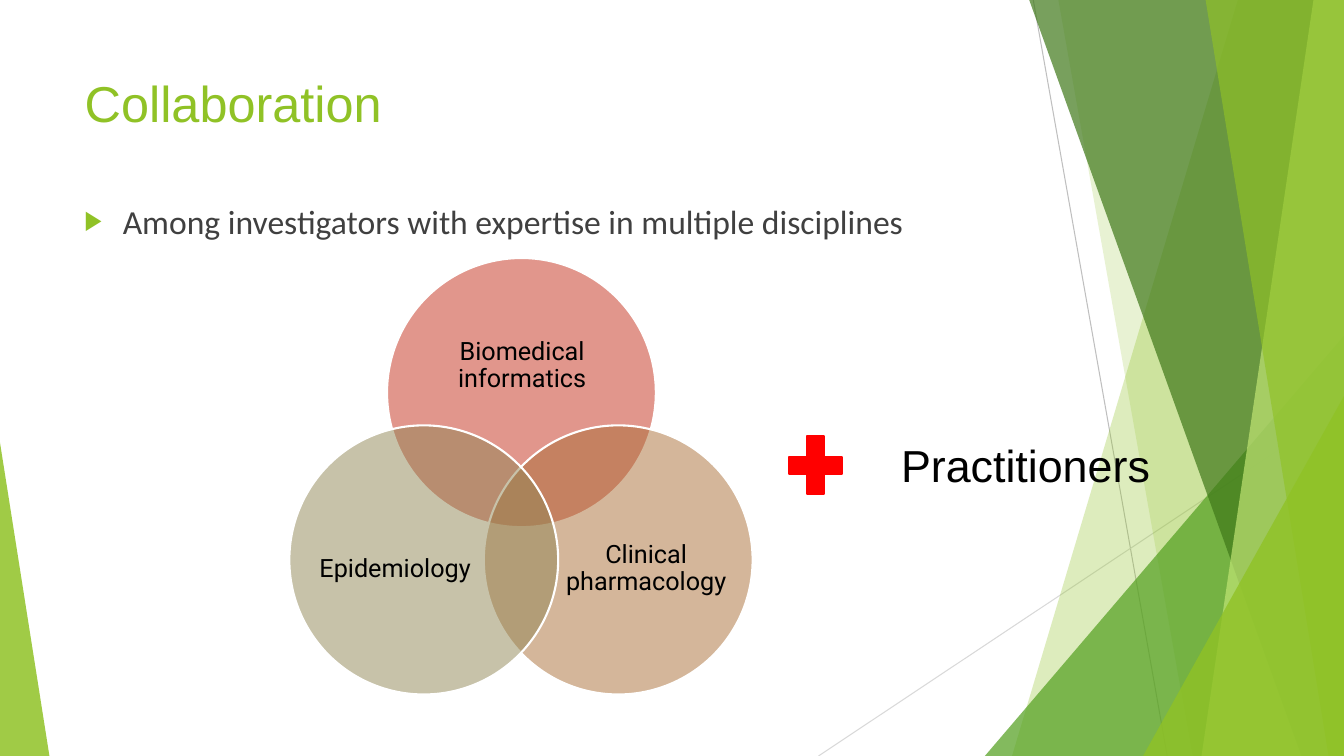
from dataclasses import dataclass

from lxml import etree
from pptx import Presentation, util as u
from pptx.dml.color import RGBColor
from pptx.enum import shapes, text
from pptx.oxml.ns import qn

SHAPE = shapes.MSO_SHAPE
ANCHOR = text.MSO_ANCHOR
ALIGN = text.PP_ALIGN


@dataclass(frozen=True)
class Theme:
    """Colours, fonts and type sizes of the slide."""
    lime: str = "90C226"
    pale: str = "C0E474"
    green: str = "54A021"
    forest: str = "3F7819"
    grey: str = "BFBFBF"
    silver: str = "D9D9D9"
    white: str = "FFFFFF"
    black: str = "000000"
    body: str = "404040"
    red: str = "FF0000"
    brick: str = "C42F1A"
    copper: str = "AB6E37"
    olive: str = "918655"
    heading_font: str = "Arial"
    body_font: str = "Calibri"
    label_font: str = "Roboto"
    title_size: int = 36
    callout_size: int = 32
    body_size: int = 24
    label_size: int = 18


class Deck:
    """Draws elements on one slide, with lengths in percent of its size."""

    def __init__(self, theme):
        self.t = theme
        self.prs = Presentation()
        self.prs.slide_width, self.prs.slide_height = u.Inches(13.33), u.Inches(7.5)
        self.s = self.prs.slides.add_slide(self.prs.slide_layouts[5])

    def x(self, share):
        return round(self.prs.slide_width * share / 100)

    def y(self, share):
        return round(self.prs.slide_height * share / 100)

    def box(self, left, top, width, height):
        return self.x(left), self.y(top), self.x(width), self.y(height)

    def put(self, obj, values):
        for name, value in values.items():
            setattr(obj, name, value)

    def paint(self, sp, color, alpha=100, line=None):
        sp.shadow.inherit = False
        sp.fill.solid()
        sp.fill.fore_color.rgb = RGBColor.from_string(color)
        if alpha < 100:
            clr = sp._element.spPr.find(qn("a:solidFill"))[0]
            etree.SubElement(clr, qn("a:alpha"), val=str(alpha * 1000))
        if line:
            sp.line.color.rgb = RGBColor.from_string(line)
            sp.line.width = u.Pt(1.5)
        else:
            sp.line.fill.background()

    def line(self, start, end, color):
        sp = self.s.shapes.add_connector(
            shapes.MSO_CONNECTOR.STRAIGHT,
            self.x(start[0]), self.y(start[1]), self.x(end[0]), self.y(end[1]))
        sp.line.color.rgb = RGBColor.from_string(color)
        sp.line.width = u.Pt(0.75)
        etree.SubElement(sp._element.spPr, qn("a:effectLst"))

    def band(self, top, bottom, color, alpha):
        fb = self.s.shapes.build_freeform(self.x(top), 0)
        fb.add_line_segments([(self.x(100), 0), (self.x(100), self.y(100)),
                              (self.x(bottom), self.y(100))], close=True)
        self.paint(fb.convert_to_shape(), color, alpha)

    def shape(self, kind, box, color, alpha=100, line=None, adj=None):
        sp = self.s.shapes.add_shape(kind, *self.box(*box))
        if adj is not None:
            sp.adjustments[0] = adj
        self.paint(sp, color, alpha, line)

    def fill_text(self, sp, words, font, size, color, frame=None, para=None):
        tf = sp.text_frame
        self.put(tf, {"word_wrap": True, "auto_size": text.MSO_AUTO_SIZE.NONE,
                      "vertical_anchor": ANCHOR.TOP, **(frame or {})})
        p = tf.paragraphs[0]
        self.put(p, {"alignment": ALIGN.LEFT, **(para or {})})
        r = p.add_run()
        r.text = words
        self.put(r.font, {"name": font, "size": u.Pt(size)})
        r.font.color.rgb = RGBColor.from_string(color)
        return p

    def title(self, words, box):
        sp = self.s.shapes.title
        self.put(sp, dict(zip(("left", "top", "width", "height"), self.box(*box))))
        self.fill_text(sp, words, self.t.heading_font, self.t.title_size, self.t.lime)

    def text(self, words, box, *style, **formats):
        sp = self.s.shapes.add_textbox(*self.box(*box))
        return self.fill_text(sp, words, *style, **formats)

    def bullet(self, words, box):
        p = self.text(words, box, self.t.body_font, self.t.body_size, self.t.body,
                      para={"space_before": u.Pt(10)})
        pPr = p._p.get_or_add_pPr()
        indent = u.Inches(0.38)
        pPr.set("marL", str(indent))
        pPr.set("indent", str(-indent))
        clr = etree.SubElement(pPr, qn("a:buClr"))
        etree.SubElement(clr, qn("a:srgbClr"), val=self.t.lime)
        etree.SubElement(pPr, qn("a:buSzPct"), val="80000")
        etree.SubElement(pPr, qn("a:buFont"), typeface=self.t.heading_font)
        etree.SubElement(pPr, qn("a:buChar"), char="▶")

    def venn_set(self, words, left, top, color, label_box):
        self.shape(SHAPE.OVAL, (left, top, 20, 35.6), color, 50, self.t.white)
        margins = ("margin_left", "margin_top", "margin_right", "margin_bottom")
        self.text(words, label_box, self.t.label_font, self.t.label_size, self.t.black,
                  frame={"vertical_anchor": ANCHOR.MIDDLE, **dict.fromkeys(margins, 0)},
                  para={"alignment": ALIGN.CENTER, "line_spacing": 0.9,
                        "space_after": u.Pt(6.3)})


def main():
    t = Theme()
    d = Deck(t)

    d.line((76.88, 0), (86.85, 100), t.grey)
    d.line((100, 53.73), (60.9, 100), t.silver)
    d.band(92.1, 75.3, t.lime, 30)
    d.band(78.75, 88.73, t.lime, 20)
    d.shape(SHAPE.ISOSCELES_TRIANGLE, (73.28, 44.4, 26.72, 55.6), t.green, 72, adj=1)
    for band in ((76.58, 96.83, t.forest, 70), (97.73, 89.4, t.pale, 70),
                 (89.7, 98.85, t.lime, 65)):
        d.band(*band)
    d.shape(SHAPE.ISOSCELES_TRIANGLE, (85.05, 52.4, 14.95, 47.6), t.lime, 80, adj=1)
    d.shape(SHAPE.ISOSCELES_TRIANGLE, (0, 58.53, 3.68, 41.47), t.lime, 85, adj=0)

    d.title("Collaboration", (5.55, 8.93, 70.5, 19.2))
    d.bullet("Among investigators with expertise in multiple disciplines",
             (5.55, 25.87, 70.5, 56.53))

    for venn_set in (
            ("Biomedical informatics", 28.8, 34.13, t.brick, (31.5, 40.4, 14.7, 16)),
            ("Clinical pharmacology", 36, 56.27, t.copper, (42.08, 65.47, 12, 19.6)),
            ("Epidemiology", 21.53, 56.27, t.olive, (23.4, 65.47, 12, 19.6))):
        d.venn_set(*venn_set)

    d.shape(SHAPE.MATH_PLUS, (57.98, 56.27, 5.4, 10.53), t.red, line=t.red)
    d.text("Practitioners", (66.3, 57.2, 20.18, 8.53), t.heading_font,
           t.callout_size, t.black,
           frame={"word_wrap": False, "auto_size": text.MSO_AUTO_SIZE.SHAPE_TO_FIT_TEXT})

    d.prs.save("out.pptx")


if __name__ == "__main__":
    main()
